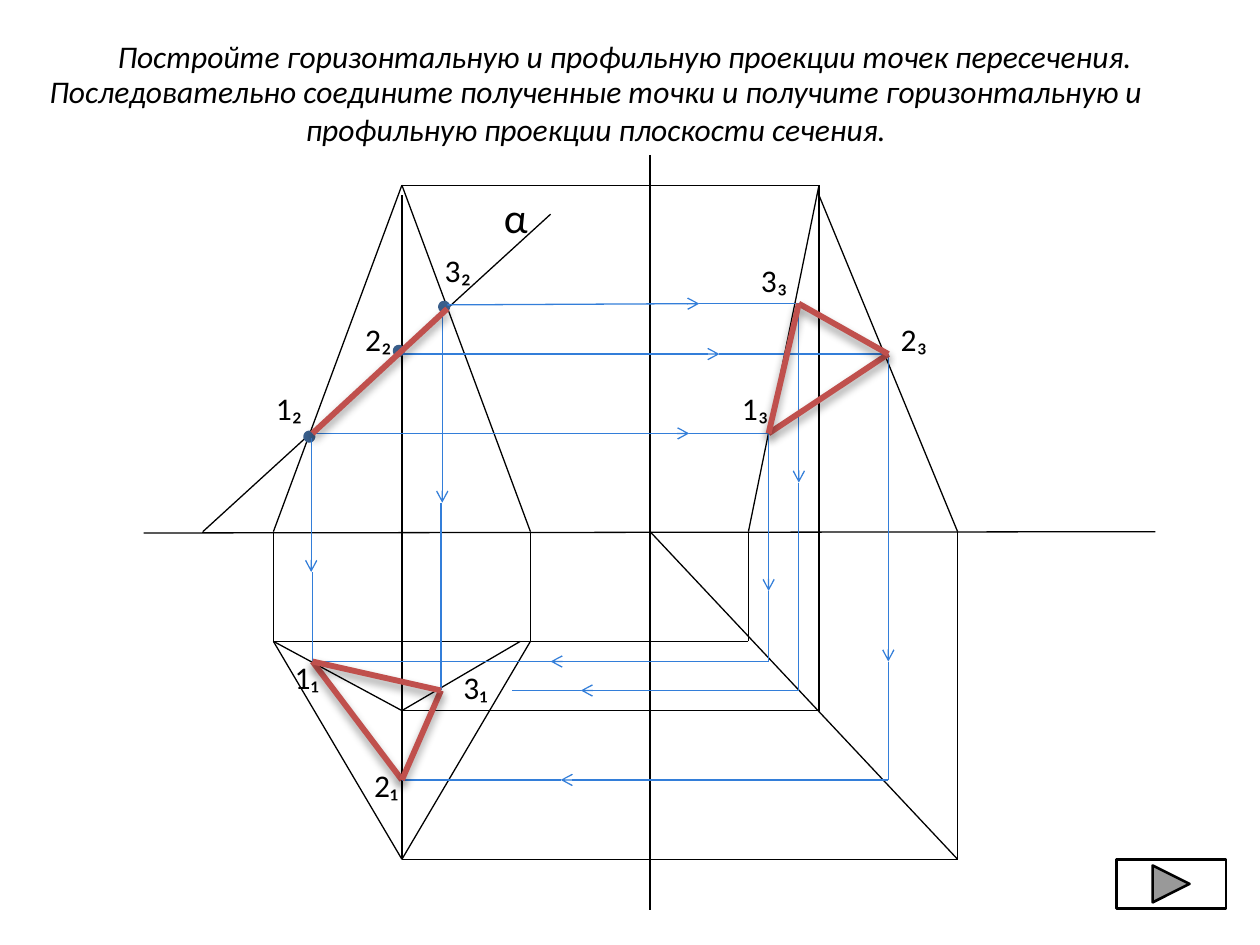
import itertools

import pptx
import pptx.dml.color
import pptx.enum.shapes
import pptx.enum.text
import pptx.oxml
import pptx.oxml.ns
import pptx.util

THEME = {
    "font": "Calibri",
    "ink": "000000", "paper": "FFFFFF",
    "ray": "337ED9", "section": "C0504D",
    "dot": "4F81BD", "dot_edge": "3A5F8C",
    "text": 18, "plane_text": 24,
    "thin": 0.75, "thick": 3.35, "button": 1.5,
}
SHADOW = ('<a:outerShdw blurRad="66040" dist="38100" dir="5400000" rotWithShape="0">'
          '<a:srgbClr val="000000"><a:alpha val="40000"/></a:srgbClr></a:outerShdw>')

presentation = pptx.Presentation()
presentation.slide_width = pptx.util.Inches(10)
presentation.slide_height = pptx.util.Inches(7.5)
slide = presentation.slides.add_slide(presentation.slide_layouts[6])

# Square grid: 100 columns by 75 rows
CELL = presentation.slide_width // 100


def add_line(start, end, color="ink", width="thin", arrow=False, shadow=False):
    ends = [round(value * CELL) for value in (*start, *end)]
    line = slide.shapes.add_connector(pptx.enum.shapes.MSO_CONNECTOR.STRAIGHT, *ends)
    line.line.color.rgb = pptx.dml.color.RGBColor.from_string(THEME[color])
    line.line.width = pptx.util.Pt(THEME[width])
    namespace = pptx.oxml.ns.nsdecls("a")
    if arrow:
        line.line._get_or_add_ln().append(
            pptx.oxml.parse_xml(f'<a:tailEnd {namespace} type="arrow"/>'))
    line._element.spPr.append(pptx.oxml.parse_xml(
        f'<a:effectLst {namespace}>{SHADOW if shadow else ""}</a:effectLst>'))


def add_text(text, box, size="text", heading=False):
    shape = slide.shapes.add_textbox(*[round(value * CELL) for value in box])
    frame = shape.text_frame
    frame.word_wrap = heading
    frame.text = text
    paragraph = frame.paragraphs[0]
    if heading:
        paragraph.alignment = pptx.enum.text.PP_ALIGN.CENTER
    font = paragraph.runs[0].font
    font.name = THEME["font"]
    font.size = pptx.util.Pt(THEME[size])
    font.italic = heading
    font.color.rgb = pptx.dml.color.RGBColor.from_string(THEME["ink"])
    return shape


# Task wording
title = add_text("Постройте горизонтальную и профильную проекции точек пересечения.",
                 (4.3, 2.1, 90.6, 4.7), heading=True)
title.text_frame.vertical_anchor = pptx.enum.text.MSO_ANCHOR.MIDDLE
add_text("Последовательно соедините полученные точки и получите горизонтальную и "
         "профильную проекции плоскости сечения.", (2, 5.2, 90.6, 10.1), heading=True)

# Levels and verticals shared by the three views
TOP, AXIS, BACK, INNER, FRONT = 14.7, 42.2, 50.9, 56.4, 68.2
LEFT, APEX, RIGHT, CENTER = 21.7, 31.9, 42.1, 51.6
SIDE_LEFT, SIDE_APEX, SIDE_RIGHT = 59.4, 65, 76

# Axes, pyramid in three views, construction lines and cutting plane
outlines = [
    [(CENTER, 12.3), (CENTER, 72.2)],
    [(11.4, 42.3), (91.7, AXIS)],
    [(LEFT, AXIS), (APEX, TOP), (RIGHT, AXIS)],
    [(APEX, 15.5), (APEX, AXIS), (APEX, INNER), (APEX, FRONT)],
    [(APEX, TOP), (SIDE_APEX, TOP), (SIDE_APEX, AXIS), (SIDE_APEX, INNER)],
    [(SIDE_LEFT, AXIS), (SIDE_APEX, TOP)],
    [(SIDE_APEX, 15.5), (SIDE_RIGHT, AXIS), (SIDE_RIGHT, FRONT), (CENTER, AXIS)],
    [(LEFT, AXIS), (LEFT, BACK), (APEX, FRONT), (RIGHT, BACK), (RIGHT, AXIS)],
    [(LEFT, BACK), (RIGHT, BACK), (CENTER, BACK), (SIDE_LEFT, BACK), (SIDE_LEFT, AXIS)],
    [(LEFT, BACK), (APEX, INNER), (41.3, BACK)],
    [(APEX, INNER), (50.8, INNER), (SIDE_APEX, INNER)],
    [(APEX, FRONT), (50.8, FRONT), (SIDE_RIGHT, FRONT)],
    [(16.1, AXIS), (43.7, 17)],
]
for outline in outlines:
    for start, end in itertools.pairwise(outline):
        add_line(start, end)

# Intersection points on the front view
for left, top in [(24.3, 34.4), (31.4, 27.6), (35, 24.1)]:
    dot = slide.shapes.add_shape(
        pptx.enum.shapes.MSO_SHAPE.OVAL,
        *[round(value * CELL) for value in (left, top, 0.5, 0.5)])
    dot.shadow.inherit = False
    dot.fill.solid()
    dot.fill.fore_color.rgb = pptx.dml.color.RGBColor.from_string(THEME["dot"])
    dot.line.color.rgb = pptx.dml.color.RGBColor.from_string(THEME["dot_edge"])
    dot.line.width = pptx.util.Pt(THEME["thick"])

# Section vertices in the top and side views
top_1, top_2, top_3 = (24.8, 52.5), (APEX, 61.9), (35, 54.8)
side_1, side_2, side_3 = (61, 34.4), (70.5, 28.1), (63.4, 24.1)

# Projection rays: start, arrow tip, end
rays = [
    ((35.1, 24.5), (35.1, 39.9), top_3),
    ((24.7, 34.8), (24.7, 45.4), top_1),
    ((35.5, 24.2), (55.5, 24.1), side_3),
    ((APEX, 28.1), (57.1, 28.1), side_2),
    ((24.8, 34.4), (54.7, 34.4), side_1),
    (side_1, (61, 46.9), (61, 52.5)),
    (side_2, (70.5, 52.5), (70.5, 61.9)),
    (side_3, (63.4, 38.3), (63.4, 54.8)),
    ((61, 52.5), (43.7, 52.5), top_1),
    ((70.5, 61.9), (44.5, 61.9), top_2),
    ((63.4, 54.8), (46.1, 54.8), (40.6, 54.8)),
]
for start, tip, end in rays:
    add_line(start, tip, "ray", arrow=True)
    # The second half keeps to the direction of the first
    vertical = abs(tip[0] - start[0]) < abs(tip[1] - start[1])
    add_line((end[0], tip[1]) if vertical else tip, end, "ray")

# Section in all three views
for section in [
    [(24.8, 34.4), (35.5, 24.5)],
    [top_1, top_2, top_3, top_1],
    [side_1, side_2, side_3, side_1],
]:
    for start, end in itertools.pairwise(section):
        add_line(start, end, "section", "thick", shadow=True)

# Point and plane labels
add_text("α", (39, 14.7, 3.9, 5), "plane_text")
for label, left, top in [
    ("1₂", 20.9, 30.4), ("2₂", 28, 24.9), ("3₂", 34.3, 19.4),
    ("1₃", 57.9, 30.4), ("2₃", 70.5, 24.9), ("3₃", 59.4, 20.2),
    ("1₁", 22.4, 51.7), ("2₁", 28.7, 60.3), ("3₁", 35.8, 52.5),
]:
    add_text(label, (left, top, 4.1, 4))

# Forward button
button = slide.shapes.add_shape(
    pptx.enum.shapes.MSO_SHAPE.ACTION_BUTTON_FORWARD_OR_NEXT,
    *[round(value * CELL) for value in (88.6, 68.2, 8.7, 3.9)])
button.shadow.inherit = False
button.fill.solid()
button.fill.fore_color.rgb = pptx.dml.color.RGBColor.from_string(THEME["paper"])
button.line.color.rgb = pptx.dml.color.RGBColor.from_string(THEME["ink"])
button.line.width = pptx.util.Pt(THEME["button"])

presentation.save("out.pptx")
